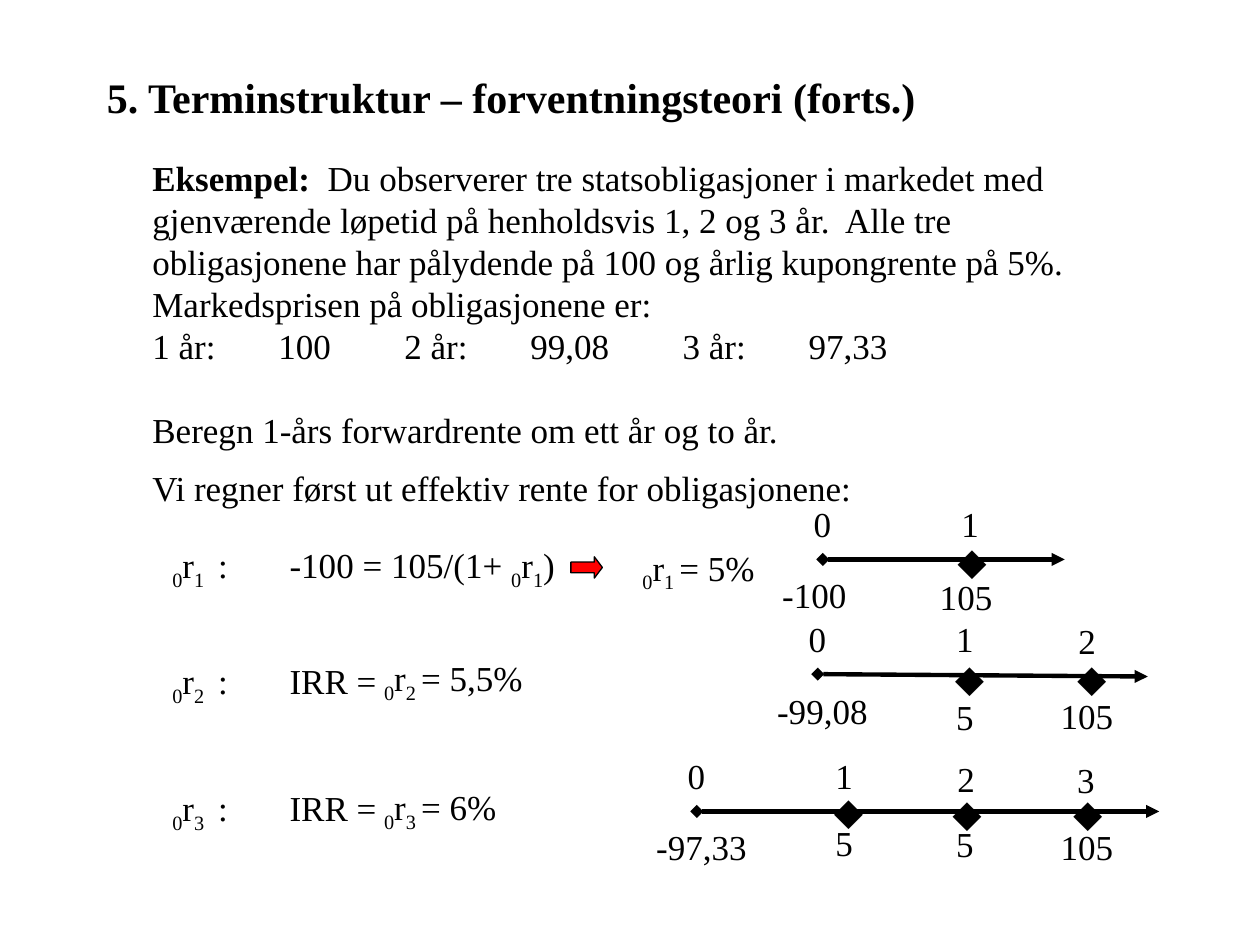
"""Build the slide on the term structure and the expectations theory."""
from lxml import etree
from pptx import Presentation
from pptx.dml.color import RGBColor
from pptx.enum.shapes import MSO_CONNECTOR, MSO_SHAPE
from pptx.oxml.ns import qn
from pptx.util import Pt

STRAIGHT = MSO_CONNECTOR.STRAIGHT
RIGHT_ARROW = MSO_SHAPE.RIGHT_ARROW
SERIF, SANS = "Times New Roman", "Arial"
BLACK, RED = "000000", "FF0000"

TITLE = "5. Terminstruktur – forventningsteori (forts.)"
EXAMPLE = [
    "|Eksempel:  |Du observerer tre statsobligasjoner i markedet med "
    "gjenværende løpetid på henholdsvis 1, 2 og 3 år.  Alle tre "
    "obligasjonene har pålydende på 100 og årlig kupongrente på 5%.  "
    "Markedsprisen på obligasjonene er:",
    "1 år:\t100\t2 år:\t99,08\t3 år:\t97,33",
    "Beregn 1-års forwardrente om ett år og to år.",
]
PRICE_TABS = [72, 144, 216, 303, 375]
FIRST_STEP = "Vi regner først ut effektiv rente for obligasjonene:"

# Text between bars is set as subscript: left, top, width, text
FORMULAS = [
    (91.4, 307.4, 235, "|0|r|1 | :\t-100 = 105/(1+ |0|r|1|)"),
    (360, 308.9, 80, "|0|r|1 |= 5%"),
    (91.4, 373.7, 139, "|0|r|2 | :\tIRR ="),
    (212.4, 372.2, 144, "|0|r|2 |= 5,5%"),
    (91.4, 446.4, 139, "|0|r|3 | :\tIRR ="),
    (212.4, 445.7, 144, "|0|r|3 |= 6%"),
]

# Each timeline: axis ends, (text, left, top) labels, (left, top) marks
TIMELINES = [
    {"axis": (470.2, 319.7, 608.4, 319.7),
     "labels": [("0", 457.9, 283.7), ("-100", 439.9, 324),
                ("1", 542.2, 283.7), ("105", 529.9, 325.4)],
     "marks": [(540, 301.7)]},
    {"axis": (467.3, 385.2, 655.9, 386.6),
     "labels": [("0", 455, 349.2), ("-99,08", 437, 390.2),
                ("1", 539.3, 349.2), ("5", 539.3, 393.8),
                ("2", 609.1, 350.6), ("105", 599, 393.1)],
     "marks": [(538.6, 368.6), (608.4, 368.6)]},
    {"axis": (398.2, 463.7, 662.4, 463.7),
     "labels": [("0", 385.9, 427.7), ("-97,33", 367.9, 468),
                ("1", 470.2, 427.7), ("5", 470.2, 465.8),
                ("2", 540, 429.1), ("5", 539.3, 466.6),
                ("3", 608.4, 429.8), ("105", 599, 468)],
     "marks": [(469.4, 445), (537.1, 445.7), (606.2, 445.7)]},
]


def rgb(color):
    return RGBColor.from_string(color)


def add_text(s, paras, x, y, w, h, size=20, font=SERIF, bold=False,
             alt=None, spacing=None, tabs=(), wrap=True, last_gap=0):
    tf = s.shapes.add_textbox(Pt(x), Pt(y), Pt(w), Pt(h)).text_frame
    tf.word_wrap = wrap
    for i, text in enumerate(paras):
        p = tf.paragraphs[0] if i == 0 else tf.add_paragraph()
        if spacing:
            p.line_spacing = spacing
        if last_gap and i == len(paras) - 1:
            p.space_before = Pt(last_gap)
        if tabs and "\t" in text:
            tab_list = etree.SubElement(p._p.get_or_add_pPr(), qn("a:tabLst"))
            for pos in tabs:
                etree.SubElement(tab_list, qn("a:tab"), pos=str(Pt(pos)), algn="l")
        for j, part in enumerate(text.split("|")):
            if not part:
                continue
            r = p.add_run()
            r.text = part
            r.font.name, r.font.size = font, Pt(size)
            r.font.color.rgb = rgb(BLACK)
            r.font.bold = bold or (alt == "bold" and j % 2 == 1)
            if alt == "sub" and j % 2:
                r._r.get_or_add_rPr().set("baseline", "-25000")


def add_axis(s, x1, y1, x2, y2):
    line = s.shapes.add_connector(STRAIGHT, Pt(x1), Pt(y1), Pt(x2), Pt(y2))
    line.line.color.rgb = rgb(BLACK)
    line.line.width = Pt(2.5)
    ln = line.line._get_or_add_ln()
    etree.SubElement(ln, qn("a:headEnd"), type="diamond")
    etree.SubElement(ln, qn("a:tailEnd"), type="triangle")
    etree.SubElement(line._element.spPr, qn("a:effectLst"))


def add_arrow(s, x, y, w, h):
    sp = s.shapes.add_shape(RIGHT_ARROW, Pt(x), Pt(y), Pt(w), Pt(h))
    sp.shadow.inherit = False
    sp.adjustments[0], sp.adjustments[1] = 0.5, 0.375
    sp.fill.solid()
    sp.fill.fore_color.rgb = rgb(RED)
    sp.line.color.rgb = rgb(BLACK)
    sp.line.width = Pt(0.75)


def main():
    prs = Presentation()
    prs.slide_width, prs.slide_height = Pt(720), Pt(540)
    s = prs.slides.add_slide(prs.slide_layouts[6])
    add_text(s, [TITLE], 54, 37.4, 582, 42, size=24, bold=True)
    add_text(s, EXAMPLE, 80, 85.7, 582, 175, alt="bold",
             tabs=PRICE_TABS, last_gap=24)
    add_text(s, [FIRST_STEP], 80, 265.7, 582, 29, spacing=0.9)
    for x, y, w, text in FORMULAS:
        add_text(s, [text], x, y, w, 29, alt="sub", spacing=0.9, tabs=[67])
    add_arrow(s, 326.2, 318.2, 18, 12.2)
    for timeline in TIMELINES:
        add_axis(s, *timeline["axis"])
        for text, x, y in timeline["labels"]:
            add_text(s, [text], x, y, 78 if len(text) > 4 else 60, 31)
        for x, y in timeline["marks"]:
            add_text(s, ["⬥"], x, y, 28, 36, size=24, font=SANS, wrap=False)
    prs.save("out.pptx")


if __name__ == "__main__":
    main()
